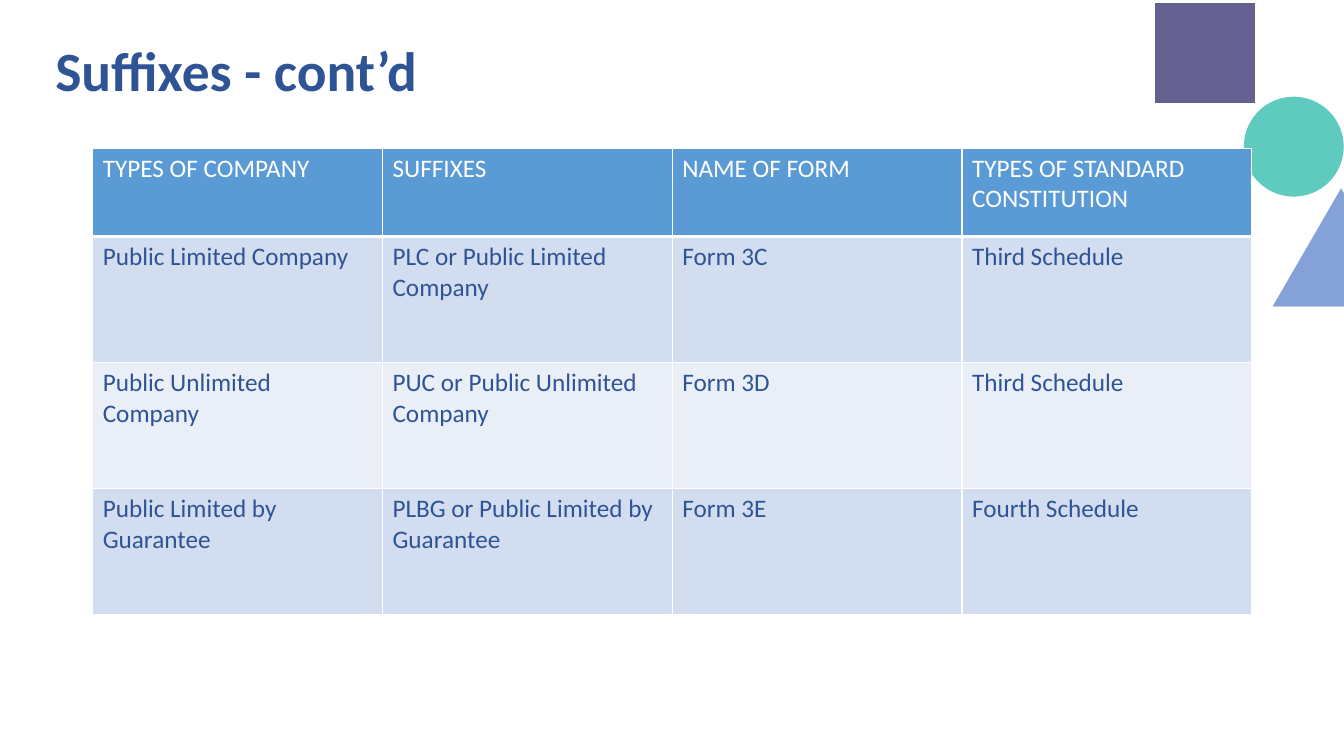
from dataclasses import dataclass

import pptx
import pptx.dml.color
import pptx.enum.shapes
import pptx.enum.text
import pptx.oxml.ns
import pptx.oxml.xmlchemy
import pptx.util
from lxml import etree

SHAPES = pptx.enum.shapes.MSO_SHAPE
GRID_COLUMNS, GRID_ROWS = 160, 90


@dataclass(frozen=True)
class Theme:
    font: str = "Calibri"
    title_size: float = 39.6
    table_size: float = 18
    ink: str = "2F5496"
    white: str = "FFFFFF"
    header: str = "5B9BD5"
    bands: tuple = ("D2DEEF", "EAEFF7")
    square: str = "2B2666"
    circle: str = "00AB98"
    triangle: str = "4472C4"


def color(value):
    return pptx.dml.color.RGBColor.from_string(value)


def add_child(parent, tag, **attributes):
    return etree.SubElement(parent, pptx.oxml.ns.qn(tag), **attributes)


class SlideBuilder:
    def __init__(self, presentation, theme):
        self.theme = theme
        self.column = presentation.slide_width / GRID_COLUMNS
        self.row = presentation.slide_height / GRID_ROWS
        self.slide = presentation.slides.add_slide(presentation.slide_layouts[6])

    def area(self, left, top, width, height):
        return (round(left * self.column), round(top * self.row),
                round(width * self.column), round(height * self.row))

    def format_text(self, text_frame, size, ink, bold=False):
        for paragraph in text_frame.paragraphs:
            for run in paragraph.runs:
                run.font.name = self.theme.font
                run.font.size = pptx.util.Pt(size)
                run.font.bold = bold
                run.font.color.rgb = color(ink)

    def decoration(self, kind, area, fill, opacity, outlined=False):
        shape = self.slide.shapes.add_shape(kind, *self.area(*area))
        shape.shadow.inherit = False
        shape.fill.solid()
        shape.fill.fore_color.rgb = color(fill)
        fill_color = shape.element.spPr.find(pptx.oxml.ns.qn("a:solidFill"))[0]
        add_child(fill_color, "a:alpha", val=str(opacity * 1000))
        if outlined:
            shape.line.color.rgb = color(self.theme.white)
            shape.line.width = pptx.util.Pt(1)
        else:
            shape.line.fill.background()

    def title(self, text, area):
        text_frame = self.slide.shapes.add_textbox(*self.area(*area)).text_frame
        text_frame.word_wrap = True
        text_frame.vertical_anchor = pptx.enum.text.MSO_ANCHOR.MIDDLE
        text_frame.text = text
        text_frame.paragraphs[0].line_spacing = 0.9
        self.format_text(text_frame, self.theme.title_size, self.theme.ink, bold=True)

    def borders(self, cell, bottom):
        properties = cell._tc.get_or_add_tcPr()
        for side, points in (("L", 1), ("R", 1), ("T", 1), ("B", bottom)):
            line = add_child(properties, f"a:ln{side}", w=str(pptx.util.Pt(points)))
            add_child(add_child(line, "a:solidFill"), "a:srgbClr", val=self.theme.white)

    def table(self, rows, left, top, width, row_heights):
        area = self.area(left, top, width, sum(row_heights))
        table = self.slide.shapes.add_table(len(rows), len(rows[0]), *area).table
        for row_index, (texts, height) in enumerate(zip(rows, row_heights)):
            table.rows[row_index].height = round(height * self.row)
            is_header = row_index == 0
            fill = self.theme.header if is_header else self.theme.bands[(row_index - 1) % 2]
            ink = self.theme.white if is_header else self.theme.ink
            for column_index, text in enumerate(texts):
                cell = table.cell(row_index, column_index)
                cell.text_frame.text = text
                self.format_text(cell.text_frame, self.theme.table_size, ink)
                self.borders(cell, bottom=3 if is_header else 1)
                cell.fill.solid()
                cell.fill.fore_color.rgb = color(fill)


def main():
    presentation = pptx.Presentation()
    presentation.slide_width = pptx.util.Inches(13.33)
    presentation.slide_height = pptx.util.Inches(7.5)
    theme = Theme()
    builder = SlideBuilder(presentation, theme)

    for layer in range(2):
        builder.decoration(SHAPES.RECTANGLE, (137.52, 0.36, 11.88, 11.88), theme.square, 48)
        builder.decoration(SHAPES.OVAL, (148.08, 11.52, 11.88, 11.88), theme.circle, 39)
        builder.decoration(SHAPES.ISOSCELES_TRIANGLE, (151.32, 22.2, 16.68, 14.4),
                           theme.triangle, 41, outlined=True)

    builder.title("Suffixes - cont’d", (5.4, 5.64, 107.04, 6.24))

    rows = [
        ("TYPES OF COMPANY", "SUFFIXES", "NAME OF FORM", "TYPES OF STANDARD CONSTITUTION"),
        ("Public Limited Company", "PLC or Public Limited Company",
         "Form 3C", "Third Schedule"),
        ("Public Unlimited Company", "PUC or Public Unlimited Company",
         "Form 3D", "Third Schedule"),
        ("Public Limited by Guarantee", "PLBG or Public Limited by Guarantee",
         "Form 3E", "Fourth Schedule"),
    ]
    builder.table(rows, 11.04, 17.64, 138, (10.5, 15, 15, 15))
    presentation.save("out.pptx")


if __name__ == "__main__":
    main()
